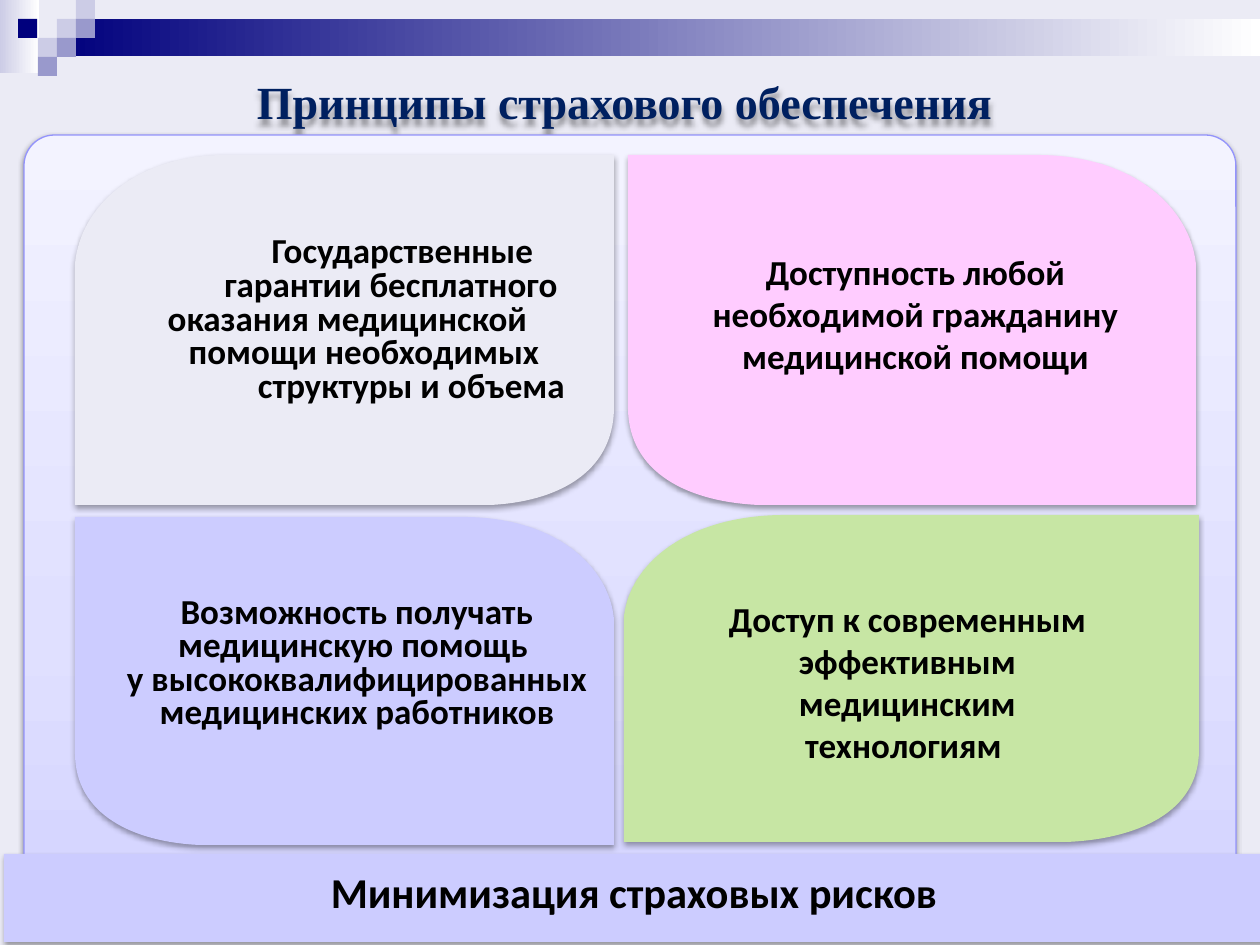
"""Builds the slide on the principles of insurance coverage."""
from lxml import etree
from pptx import Presentation
from pptx import util as u
from pptx.dml.color import RGBColor
from pptx.enum import shapes, text
from pptx.oxml.ns import qn

PX = 914400 / 126
CELL = 19
BACKGROUND = RGBColor(0xEB, 0xEB, 0xF5)
BLACK = RGBColor(0x00, 0x00, 0x00)
WHITE = RGBColor(0xFF, 0xFF, 0xFF)
NAVY = RGBColor(0x00, 0x00, 0x7D)
TITLE_BLUE = RGBColor(0x00, 0x20, 0x60)
PALE = RGBColor(0xCC, 0xCC, 0xE6)
MID = RGBColor(0x99, 0x99, 0xCC)
LILAC = RGBColor(0xCC, 0xCC, 0xFF)
PINK = RGBColor(0xFF, 0xCC, 0xFF)
GREEN = RGBColor(0xC7, 0xE6, 0xA4)
EDGE = RGBColor(0x93, 0x93, 0xFC)
PANEL_STOPS = [(0, RGBColor(0xD4, 0xD4, 0xFF)), (35, RGBColor(0xE0, 0xE0, 0xFF)),
               (100, RGBColor(0xF3, 0xF3, 0xFF))]

SQUARES = [(3, 1, PALE), (4, 0, PALE), (4, 1, MID), (2, 2, PALE),
           (0.95, 1, NAVY), (3, 2, MID), (2, 3, MID)]
LEAF_START = (0.77, 1)
LEAF_CURVES = [
    ((0.38, 1), (0, 1), (0, 1)),
    ((0, 1), (0, 0.66), (0, 0.31)),
    ((0.01, 0.15), (0.11, 0), (0.28, 0)),
    ((0.64, 0), (1, 0), (1, 0)),
    ((1, 0), (1, 0.36), (1, 0.72)),
    ((1, 0.91), (0.89, 0.99), LEAF_START),
]
LEAVES = [((75, 155, 539, 350), BACKGROUND, False), ((628, 155, 568, 350), PINK, True),
          ((75, 517, 539, 328), LILAC, True), ((624, 515, 575, 327), GREEN, False)]
GUARANTEES = [("Государственные ", 124), ("гарантии бесплатного", 93),
              ("оказания медицинской", 6), ("помощи необходимых", 39),
              ("структуры и объема", 134)]
CAPTIONS = [
    ((679, 244, 473, 140), 1,
     ["Доступность любой необходимой гражданину медицинской помощи"]),
    ((699, 591, 417, 183), 1,
     ["Доступ к современным эффективным медицинским технологиям "]),
    ((114, 591, 486, 149), 0.8,
     ["Возможность получать медицинскую помощь ",
      "у высококвалифицированных медицинских работников"]),
]


def px(length):
    return u.Emu(round(length * PX))


def shade(shape, alpha=35, distance=1.8):
    shape.shadow.inherit = False
    effects = shape._element.spPr.find(qn("a:effectLst"))
    shadow = etree.SubElement(effects, qn("a:outerShdw"), blurRad=str(u.Pt(3.1)),
                              dist=str(u.Pt(distance)), dir="5400000",
                              algn="ctr", rotWithShape="0")
    colour = etree.SubElement(shadow, qn("a:srgbClr"), val=str(BLACK))
    etree.SubElement(colour, qn("a:alpha"), val=str(alpha * 1000))


def add_block(slide, box, colour=None, kind=shapes.MSO_SHAPE.RECTANGLE):
    block = slide.shapes.add_shape(kind, *map(px, box))
    block.shadow.inherit = False
    block.line.fill.background()
    if colour is not None:
        block.fill.solid()
        block.fill.fore_color.rgb = colour
    return block


def set_gradient(shape, stops, angle):
    shape.fill.gradient()
    shape.fill.gradient_angle = angle
    stop_list = shape._element.spPr.find(".//" + qn("a:gsLst"))
    for old_stop in list(stop_list):
        stop_list.remove(old_stop)
    for position, colour in stops:
        stop = etree.SubElement(stop_list, qn("a:gs"), pos=str(position * 1000))
        etree.SubElement(stop, qn("a:srgbClr"), val=str(colour))


def add_run(paragraph, words, size, font="Calibri", colour=BLACK):
    run = paragraph.add_run()
    run.text = words
    run.font.size = u.Pt(size)
    run.font.name = font
    run.font.bold = True
    run.font.color.rgb = colour


def curve_segments(shape):
    lines = list(shape._element.spPr.iter(qn("a:lnTo")))
    for first in range(0, len(lines), 3):
        curve = etree.Element(qn("a:cubicBezTo"))
        lines[first].addprevious(curve)
        for line in lines[first:first + 3]:
            curve.append(line[0])
            line.getparent().remove(line)


def add_leaf(slide, box, colour, mirrored):
    left, top, width, height = box

    def place(point):
        x, y = point
        return left + width * (1 - x if mirrored else x), top + height * y

    builder = slide.shapes.build_freeform(*place(LEAF_START), scale=PX)
    builder.add_line_segments([place(point) for curve in LEAF_CURVES for point in curve],
                              close=True)
    leaf = builder.convert_to_shape()
    curve_segments(leaf)
    leaf.fill.solid()
    leaf.fill.fore_color.rgb = colour
    leaf.line.fill.background()
    shade(leaf)
    return leaf


def add_guarantees(leaf):
    frame = leaf.text_frame
    frame.word_wrap = True
    frame.vertical_anchor = text.MSO_ANCHOR.TOP
    frame.margin_top = px(82)
    for index, (words, indent) in enumerate(GUARANTEES):
        line = frame.add_paragraph() if index else frame.paragraphs[0]
        line.alignment = text.PP_ALIGN.CENTER
        line.line_spacing = 0.8
        line._p.get_or_add_pPr().set("marL", str(px(indent)))
        add_run(line, words, 20)


def add_caption(slide, box, spacing, lines):
    frame = slide.shapes.add_textbox(*map(px, box)).text_frame
    frame.word_wrap = True
    caption = frame.paragraphs[0]
    caption.alignment = text.PP_ALIGN.CENTER
    caption.line_spacing = spacing
    for index, words in enumerate(lines):
        if index:
            caption.add_line_break()
        add_run(caption, words, 20)


def add_header(slide):
    fade = add_block(slide, (0, 0, 39, 73))
    set_gradient(fade, [(0, PALE), (100, WHITE)], 0)
    bar = add_block(slide, (57, 19, 1203, 37))
    set_gradient(bar, [(0, NAVY), (100, WHITE)], 0)
    for column, row, colour in SQUARES:
        add_block(slide, (column * CELL, row * CELL, CELL, CELL), colour)


def add_panel(slide):
    panel = add_block(slide, (24, 135, 1212, 764), kind=shapes.MSO_SHAPE.ROUNDED_RECTANGLE)
    panel.adjustments[0] = 0.04
    set_gradient(panel, PANEL_STOPS, 90)
    panel.line.color.rgb = EDGE
    panel.line.width = u.Pt(0.75)
    shade(panel, alpha=38, distance=1.6)


def set_title(slide):
    title = slide.shapes.title
    title.left, title.top, title.width, title.height = map(px, (0, 26, 1260, 110))
    shade(title, alpha=40, distance=3)
    frame = title.text_frame
    frame.word_wrap = True
    frame.auto_size = text.MSO_AUTO_SIZE.NONE
    frame.vertical_anchor = text.MSO_ANCHOR.MIDDLE
    frame.margin_top = px(47)
    heading = frame.paragraphs[0]
    heading.alignment = text.PP_ALIGN.CENTER
    add_run(heading, "Принципы страхового обеспечения ", 26.3,
            "Times New Roman", TITLE_BLUE)


def add_footer(slide):
    footer = add_block(slide, (4, 854, 1260, 88), LILAC)
    shade(footer)
    frame = footer.text_frame
    frame.vertical_anchor = text.MSO_ANCHOR.MIDDLE
    frame.margin_bottom = px(20)
    risks = frame.paragraphs[0]
    risks.alignment = text.PP_ALIGN.CENTER
    add_run(risks, "Минимизация страховых рисков", 24.3)


def main():
    deck = Presentation()
    deck.slide_width, deck.slide_height = px(1260), px(945)
    slide = deck.slides.add_slide(deck.slide_layouts[5])
    slide.background.fill.solid()
    slide.background.fill.fore_color.rgb = BACKGROUND
    add_header(slide)
    add_panel(slide)
    leaves = [add_leaf(slide, *leaf) for leaf in LEAVES]
    add_guarantees(leaves[0])
    for caption in CAPTIONS:
        add_caption(slide, *caption)
    set_title(slide)
    add_footer(slide)
    deck.save("out.pptx")


if __name__ == "__main__":
    main()
